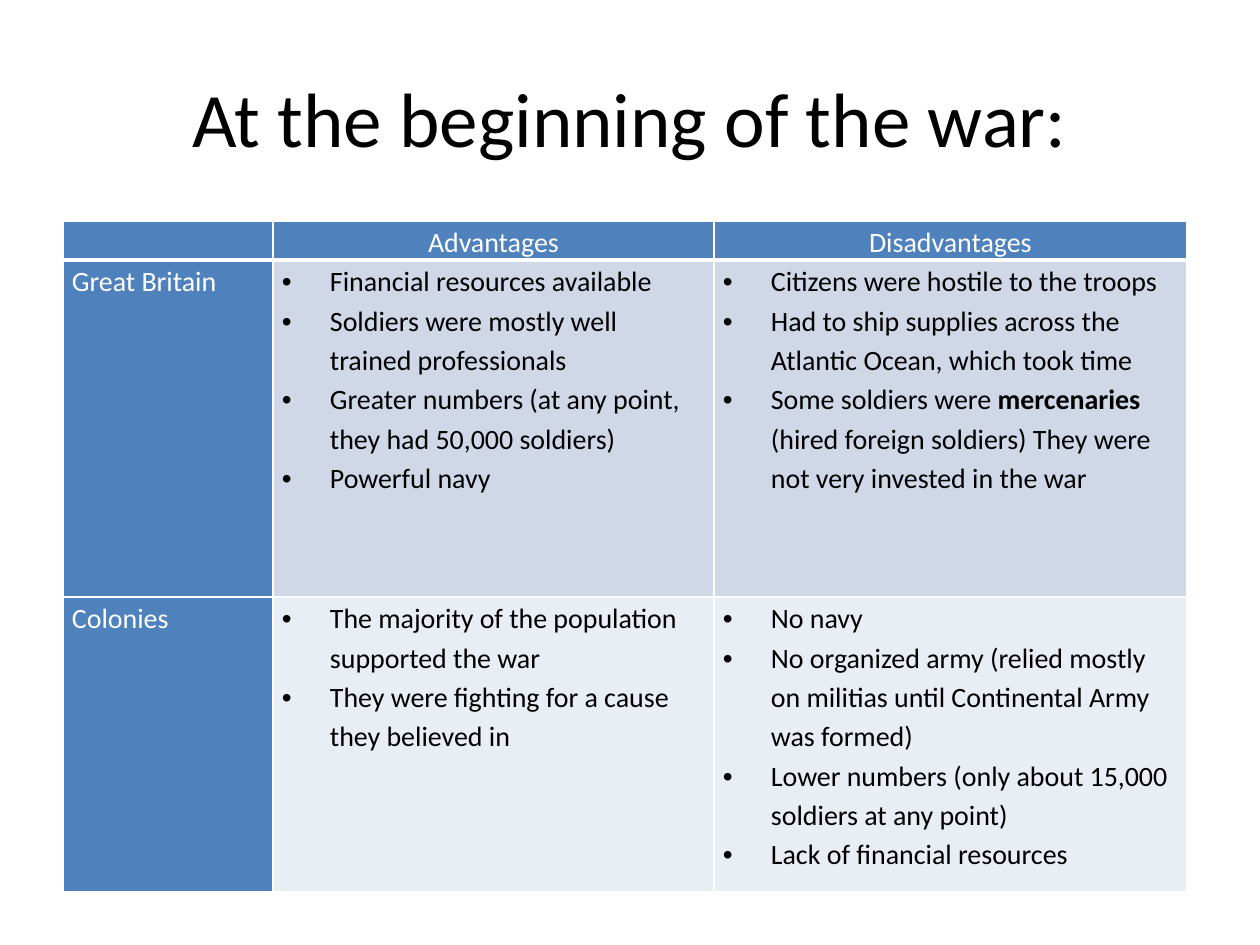
import pptx
import pptx.dml.color
import pptx.enum.text
import pptx.oxml.ns
import pptx.util
from lxml import etree

PX = 914400 // 126
FONT = "Calibri"
BLUE, WHITE, BLACK = "4F81BD", "FFFFFF", "000000"
BAND_COLORS = ["D0D8E8", "E9EDF4"]
BULLET_INDENT = 48
COLUMN_WIDTHS = [210, 441, 473]
ROW_HEIGHTS = [39, 337, 295]
HEADINGS = ["Advantages", "Disadvantages"]
BOLD_WORD = "mercenaries"
SIDES = [
    ("Great Britain",
     ["Financial resources available",
      "Soldiers were mostly well trained professionals",
      "Greater numbers (at any point, they had 50,000 soldiers)",
      "Powerful navy"],
     ["Citizens were hostile to the troops",
      "Had to ship supplies across the Atlantic Ocean, which took time",
      "Some soldiers were mercenaries (hired foreign soldiers) They were "
      "not very invested in the war"]),
    ("Colonies",
     ["The majority of the population supported the war",
      "They were fighting for a cause they believed in"],
     ["No navy",
      "No organized army (relied mostly on militias until Continental Army "
      "was formed)",
      "Lower numbers (only about 15,000 soldiers at any point)",
      "Lack of financial resources"]),
]
CENTER = pptx.enum.text.PP_ALIGN.CENTER
LEFT = pptx.enum.text.PP_ALIGN.LEFT


def px(length):
    return pptx.util.Emu(length * PX)


def rgb(color):
    return pptx.dml.color.RGBColor.from_string(color)


def add_child(parent, tag, **attributes):
    return etree.SubElement(parent, pptx.oxml.ns.qn(tag), **attributes)


def style_font(paragraph, size, color):
    paragraph.font.name = FONT
    paragraph.font.size = pptx.util.Pt(size)
    paragraph.font.color.rgb = rgb(color)


def add_title(slide, text):
    shape = slide.shapes.add_textbox(px(63), px(38), px(1134), px(157))
    frame = shape.text_frame
    frame.word_wrap = True
    frame.vertical_anchor = pptx.enum.text.MSO_ANCHOR.MIDDLE
    paragraph = frame.paragraphs[0]
    paragraph.text = text
    paragraph.alignment = CENTER
    style_font(paragraph, 44, BLACK)


def add_borders(cell, bottom_width):
    properties = cell._tc.get_or_add_tcPr()
    for side, width in (("L", 1), ("R", 1), ("T", 1), ("B", bottom_width)):
        line = add_child(properties, f"a:ln{side}", w=str(pptx.util.Pt(width)))
        add_child(add_child(line, "a:solidFill"), "a:srgbClr", val=WHITE)


def add_bullet(paragraph):
    properties = paragraph._p.get_or_add_pPr()
    properties.set("marL", str(px(BULLET_INDENT)))
    properties.set("indent", str(px(-BULLET_INDENT)))
    add_child(properties, "a:buFont", typeface="Arial")
    add_child(properties, "a:buChar", char="•")


def add_runs(paragraph, text):
    before, word, after = text.partition(BOLD_WORD)
    for part in filter(None, (before, word, after)):
        run = paragraph.add_run()
        run.text = part
        if part == BOLD_WORD:
            run.font.bold = True


def fill_cell(cell, lines, fill, color, alignment=LEFT, bullets=False, bottom_width=1):
    cell.margin_left = cell.margin_right = px(9)
    cell.margin_top = cell.margin_bottom = 0
    add_borders(cell, bottom_width)
    cell.fill.solid()
    cell.fill.fore_color.rgb = rgb(fill)
    frame = cell.text_frame
    for index, text in enumerate(lines):
        paragraph = frame.add_paragraph() if index else frame.paragraphs[0]
        paragraph.alignment = alignment
        paragraph.line_spacing = 1.15
        if bullets:
            add_bullet(paragraph)
        style_font(paragraph, 16, color)
        add_runs(paragraph, text)


def add_comparison_table(slide):
    table = slide.shapes.add_table(
        len(ROW_HEIGHTS), len(COLUMN_WIDTHS), px(63), px(221),
        px(sum(COLUMN_WIDTHS)), px(sum(ROW_HEIGHTS))).table
    table.first_row = table.horz_banding = False
    for column, width in zip(table.columns, COLUMN_WIDTHS):
        column.width = px(width)
    for row, height in zip(table.rows, ROW_HEIGHTS):
        row.height = px(height)

    # Header row
    for column, heading in enumerate(["", *HEADINGS]):
        fill_cell(table.cell(0, column), [heading], BLUE, WHITE, CENTER,
                  bottom_width=3)

    # One row for each side in the war
    for row, ((name, *lists), band) in enumerate(zip(SIDES, BAND_COLORS), 1):
        fill_cell(table.cell(row, 0), [name], BLUE, WHITE)
        for column, lines in enumerate(lists, 1):
            fill_cell(table.cell(row, column), lines, band, BLACK, bullets=True)


def main():
    presentation = pptx.Presentation()
    presentation.slide_width = px(1260)
    presentation.slide_height = px(945)
    slide = presentation.slides.add_slide(presentation.slide_layouts[6])
    add_title(slide, "At the beginning of the war:")
    add_comparison_table(slide)
    presentation.save("out.pptx")


if __name__ == "__main__":
    main()
